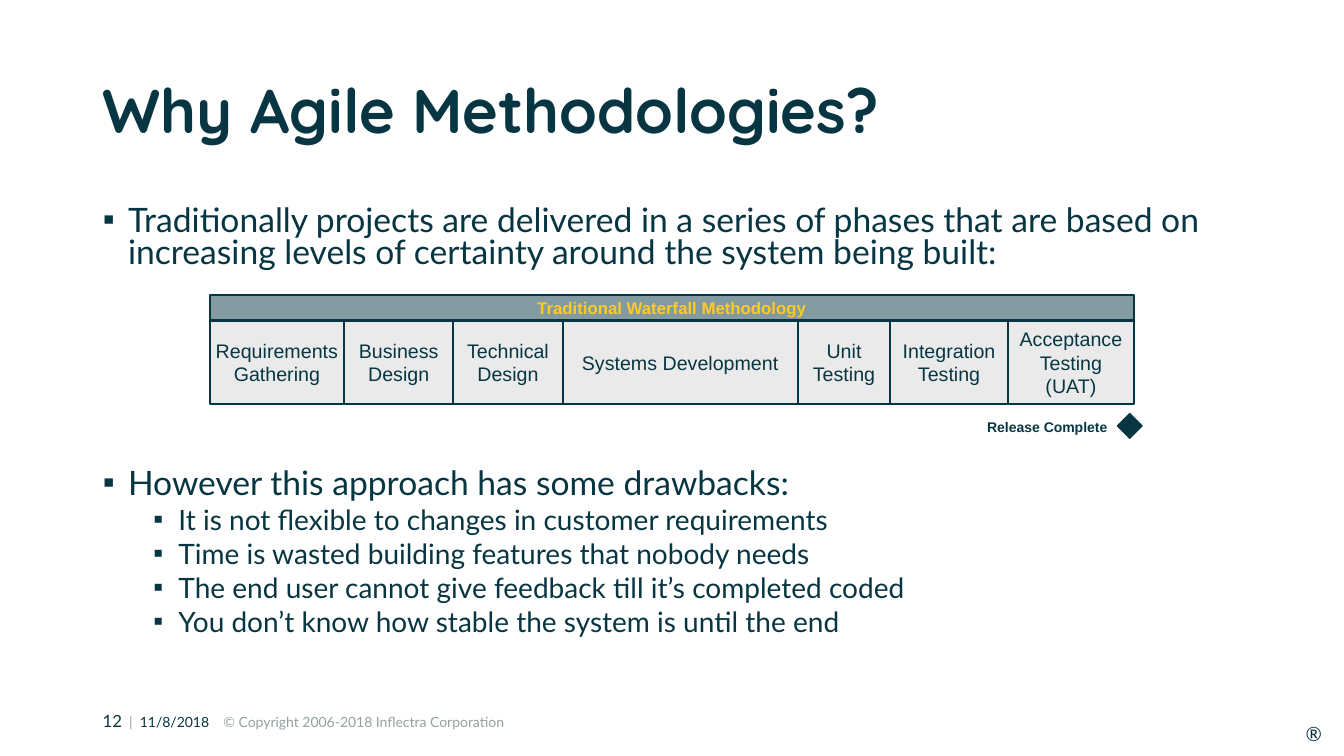
from dataclasses import dataclass

from lxml import etree
from pptx import Presentation
from pptx.dml.color import RGBColor
from pptx.enum.shapes import MSO_SHAPE
from pptx.enum.text import MSO_ANCHOR, MSO_AUTO_SIZE, PP_ALIGN
from pptx.oxml.ns import qn
from pptx.util import Inches, Pt

RECT, DIAMOND = MSO_SHAPE.RECTANGLE, MSO_SHAPE.DIAMOND
LEFT, CENTER, RIGHT = PP_ALIGN.LEFT, PP_ALIGN.CENTER, PP_ALIGN.RIGHT
TOP, MIDDLE = MSO_ANCHOR.TOP, MSO_ANCHOR.MIDDLE
NO_FIT = MSO_AUTO_SIZE.NONE


@dataclass(frozen=True)
class Theme:
    ink: str = "073642"
    muted: str = "93A1A1"
    accent: str = "FDCB26"
    phase: str = "EAEAEA"
    heading: str = "Quicksand"
    body: str = "Lato"
    diagram: str = "Arial"
    title_size: int = 44
    level_sizes: tuple = (24, 20)
    phase_size: int = 14
    header_size: int = 12
    number_size: int = 12
    small_size: int = 10


T = Theme()

# Phase label and width in twelfths of an inch
PHASES = [
    ("Requirements\nGathering", 16),
    ("Business Design", 13),
    ("Technical Design", 13),
    ("Systems Development", 28),
    ("Unit\nTesting", 11),
    ("Integration\nTesting", 14),
    ("Acceptance\nTesting (UAT)", 15),
]
# Level, space before in points, text
BULLETS = [
    (0, 0, "Traditionally projects are delivered in a series of phases that are "
           "based on increasing levels of certainty around the system being built:"),
    (0, 142, "However this approach has some drawbacks:"),
    (1, 5, "It is not flexible to changes in customer requirements"),
    (1, 5, "Time is wasted building features that nobody needs"),
    (1, 5, "The end user cannot give feedback till it’s completed coded"),
    (1, 5, "You don’t know how stable the system is until the end"),
]
FOOTER = [
    ("12", T.number_size, T.ink),
    ("  |  ", T.small_size, T.muted),
    ("11/8/2018  ", T.small_size, T.ink),
    ("  © Copyright 2006-2018 Inflectra Corporation", T.small_size, T.muted),
]


def set_attrs(obj, **values):
    for name, value in values.items():
        setattr(obj, name, value)


def add_run(p, text, font, size, color=T.ink, bold=False):
    r = p.add_run()
    r.text = text
    set_attrs(r.font, name=font, size=Pt(size), bold=bold)
    r.font.color.rgb = RGBColor.from_string(color)


def place(sp, left, top, width, height):
    set_attrs(sp, left=Inches(left), top=Inches(top),
              width=Inches(width), height=Inches(height))


def add_bullet(p, level):
    """Hang a square bullet a quarter inch left of the text."""
    pPr = p._p.get_or_add_pPr()
    pPr.set("marL", str(Inches(0.25 + 0.5 * level)))
    pPr.set("indent", str(Inches(-0.25)))
    etree.SubElement(pPr, qn("a:buFont")).set("typeface", T.diagram)
    etree.SubElement(pPr, qn("a:buChar")).set("char", "▪")


def add_title(s, text):
    sp = s.shapes.title
    place(sp, 0.92, 0.4, 11.5, 1.45)
    set_attrs(sp.text_frame, auto_size=NO_FIT, vertical_anchor=MIDDLE)
    p = sp.text_frame.paragraphs[0]
    set_attrs(p, alignment=LEFT, line_spacing=0.9)
    add_run(p, text, T.heading, T.title_size, bold=True)


def add_body(s, bullets):
    sp = s.placeholders[1]
    place(sp, 0.92, 2, 11.5, 4.76)
    tf = sp.text_frame
    set_attrs(tf, auto_size=NO_FIT, vertical_anchor=TOP)
    for i, (level, before, text) in enumerate(bullets):
        p = tf.add_paragraph() if i else tf.paragraphs[0]
        set_attrs(p, level=level, alignment=LEFT, line_spacing=0.8,
                  space_before=Pt(before))
        add_bullet(p, level)
        add_run(p, text, T.body, T.level_sizes[level])


def add_box(s, kind, at, fill, line_width):
    sp = s.shapes.add_shape(kind, *map(Inches, at))
    sp.shadow.inherit = False
    sp.fill.solid()
    sp.fill.fore_color.rgb = RGBColor.from_string(fill)
    sp.line.color.rgb = RGBColor.from_string(T.ink)
    sp.line.width = Pt(line_width)
    return sp


def add_label(sp, text, size, color=T.ink, bold=False, wrap=True):
    tf = sp.text_frame
    set_attrs(tf, word_wrap=wrap, vertical_anchor=MIDDLE)
    for i, line in enumerate(text.split("\n")):
        p = tf.add_paragraph() if i else tf.paragraphs[0]
        p.alignment = CENTER
        add_run(p, line, T.diagram, size, color, bold)


def set_alpha(sp, percent):
    color = sp.fill._xPr.find(qn("a:solidFill"))[0]
    etree.SubElement(color, qn("a:alpha")).set("val", str(percent * 1000))


def add_text(s, at, runs, font, align=LEFT, wrap=True, bold=False, inset=None):
    sp = s.shapes.add_textbox(*map(Inches, at))
    tf = sp.text_frame
    tf.word_wrap = wrap
    if inset is not None:
        sides = ("left", "top", "right", "bottom")
        set_attrs(tf, **{f"margin_{side}": Inches(inset) for side in sides})
    p = tf.paragraphs[0]
    p.alignment = align
    for text, size, color in runs:
        add_run(p, text, font, size, color, bold)


def add_waterfall(s, left=2.08, top=2.93):
    # Phases side by side under one header
    x = left
    for text, twelfths in PHASES:
        width = twelfths / 12
        sp = add_box(s, RECT, (x, top + 0.25, width, 0.83), T.phase, 1.5)
        add_label(sp, text, T.phase_size, wrap="Requirements" not in text)
        x += width
    header = add_box(s, RECT, (left, top, x - left, 0.25), T.ink, 1.5)
    set_alpha(header, 50)
    add_label(header, "Traditional Waterfall Methodology", T.header_size,
              T.accent, bold=True)
    # Release milestone
    add_box(s, DIAMOND, (11.08, 4.1, 0.25, 0.25), T.ink, 0.75)
    add_text(s, (9.69, 4.1, 1.39, 0.27),
             [("Release Complete", T.small_size, T.ink)],
             T.diagram, RIGHT, wrap=False, bold=True)


def main():
    prs = Presentation()
    set_attrs(prs, slide_width=Inches(13.33), slide_height=Inches(7.5))
    s = prs.slides.add_slide(prs.slide_layouts[1])
    add_title(s, "Why Agile Methodologies?")
    add_body(s, BULLETS)
    add_waterfall(s)
    # Footer and trademark sign
    add_text(s, (0.92, 7, 7.47, 0.3), FOOTER, T.body)
    add_text(s, (12.95, 7.16, 0.18, 0.24), [("®", 14, T.ink)], T.body,
             wrap=False, inset=0)
    prs.save("out.pptx")


if __name__ == "__main__":
    main()
